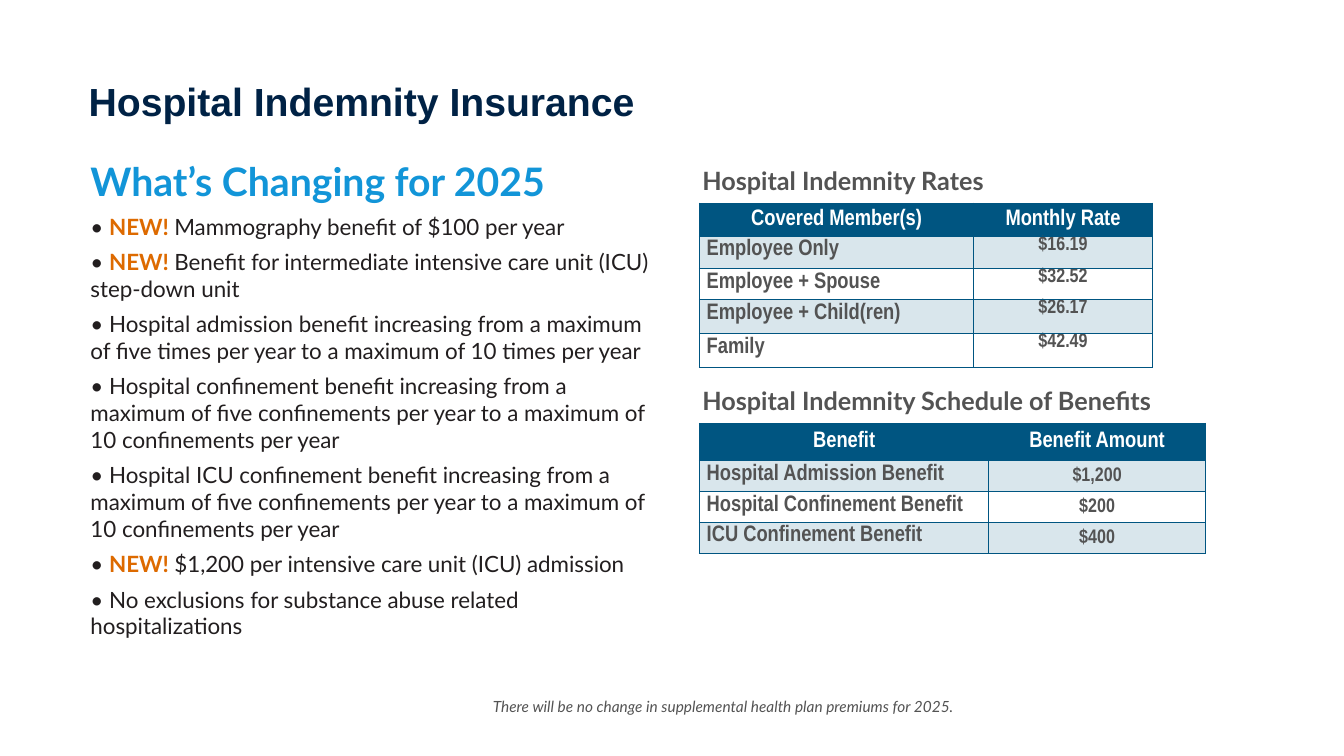
import pptx
import pptx.dml.color
import pptx.enum.text
import pptx.util
from lxml import etree
from pptx.oxml.ns import qn

Cm, Pt = pptx.util.Cm, pptx.util.Pt
Align = pptx.enum.text.PP_ALIGN
Anchor = pptx.enum.text.MSO_ANCHOR
HEX = {"navy": "002245", "blue": "1295D8", "teal": "005581", "pale": "D9E6EC",
       "white": "FFFFFF", "gray": "535353", "ink": "221E1F", "flame": "DD6A00"}

NEWS = [  # (is new, text)
    (True, "Mammography benefit of $100 per year"),
    (True, "Benefit for intermediate intensive care unit (ICU) step-down unit"),
    (False, "Hospital admission benefit increasing from a maximum of five times "
            "per year to a maximum of 10 times per year"),
    (False, "Hospital confinement benefit increasing from a maximum of five "
            "confinements per year to a maximum of 10 confinements per year"),
    (False, "Hospital ICU confinement benefit increasing from a maximum of five "
            "confinements per year to a maximum of 10 confinements per year"),
    (True, "$1,200 per intensive care unit (ICU) admission"),
    (False, "No exclusions for substance abuse related hospitalizations"),
]
RATES = [("Covered Member(s)", "Monthly Rate"), ("Employee Only", "$16.19"),
         ("Employee + Spouse", "$32.52"), ("Employee + Child(ren)", "$26.17"),
         ("Family", "$42.49")]
PLAN = [("Benefit", "Benefit Amount"), ("Hospital Admission Benefit", "$1,200"),
        ("Hospital Confinement Benefit", "$200"), ("ICU Confinement Benefit", "$400")]


def tint(color):
    return pptx.dml.color.RGBColor.from_string(HEX[color])


def style(font, size, color, name="Lato", bold=False, italic=False):
    font.name, font.size = name, Pt(size)
    font.bold, font.italic = bold, italic
    font.color.rgb = tint(color)


def add_box(slide, box):
    frame = slide.shapes.add_textbox(*map(Cm, box)).text_frame
    frame.word_wrap = True
    return frame


def add_line(slide, box, text, size, **look):
    para = add_box(slide, box).paragraphs[0]
    para.text = text
    style(para.font, size, "gray", **look)


def add_title(slide, box):
    title = slide.shapes.title
    title.left, title.top, title.width, title.height = map(Cm, box)
    frame = title.text_frame
    frame.text = "Hospital Indemnity Insurance"
    frame.auto_size = pptx.enum.text.MSO_AUTO_SIZE.NONE
    frame.vertical_anchor = Anchor.MIDDLE
    para = frame.paragraphs[0]
    para.alignment = Align.LEFT
    style(para.font, 28, "navy", "Arial", bold=True)


def add_news(slide, box):
    frame = add_box(slide, box)
    head = frame.paragraphs[0]
    head.text = "What’s Changing for 2025"
    style(head.font, 28, "blue", bold=True)
    for new, text in NEWS:
        para = frame.add_paragraph()
        para.space_before = Pt(6)
        style(para.font, 16, "ink")
        para.add_run().text = "• "
        if new:
            flag = para.add_run()
            flag.text = "NEW! "
            flag.font.bold = True
            flag.font.color.rgb = tint("flame")
        para.add_run().text = text


def add_edges(cell):
    props = cell._tc.get_or_add_tcPr()
    for i, side in enumerate(("lnL", "lnR", "lnT", "lnB")):
        edge = etree.Element(qn("a:" + side), w=str(Pt(1)))
        fill = etree.SubElement(edge, qn("a:solidFill"))
        etree.SubElement(fill, qn("a:srgbClr"), val=HEX["teal"])
        props.insert(i, edge)


def fill_cell(cell, text, row, col, pad, anchor):
    para = cell.text_frame.paragraphs[0]
    para.text = text
    head, label = row == 0, row > 0 and col == 0
    if label:
        para.line_spacing = 1.15
    else:
        para.alignment = Align.CENTER
    style(para.font, 16 if head or label else 14, "white" if head else "gray",
          "Arial Narrow", bold=True)
    side, rim = pad if head else (0.18, 0)
    cell.margin_left = cell.margin_right = Cm(side)
    cell.margin_top = cell.margin_bottom = Cm(rim)
    cell.vertical_anchor = Anchor.MIDDLE if head else Anchor.TOP if label else anchor
    cell.fill.solid()
    cell.fill.fore_color.rgb = tint("teal" if head else "pale" if row % 2 else "white")
    add_edges(cell)


def add_grid(slide, box, name, data, cols, rows, pad, anchor):
    """Heading with its table below."""
    left, top, width = box
    add_line(slide, (left, top, width, 1.02), name, 18, bold=True)
    grid = slide.shapes.add_table(
        len(rows), len(cols), Cm(left + 0.18), Cm(top + 1.08),
        Cm(sum(cols)), Cm(sum(rows))).table
    for col, wide in zip(grid.columns, cols):
        col.width = Cm(wide)
    for row, high in zip(grid.rows, rows):
        row.height = Cm(high)
    for r, texts in enumerate(data):
        for c, text in enumerate(texts):
            fill_cell(grid.cell(r, c), text, r, c, pad, anchor)


def main():
    deck = pptx.Presentation()
    deck.slide_width, deck.slide_height = Cm(33.87), Cm(19.05)
    slide = deck.slides.add_slide(deck.slide_layouts[5])

    # Title and list of changes
    add_title(slide, (1.98, 1.75, 17.3, 1.57))
    add_news(slide, (2.03, 3.84, 14.91, 11.84))

    # Rates and benefits
    add_grid(slide, (17.45, 4.04, 16.4), "Hospital Indemnity Rates", RATES,
             (6.91, 4.5), (0.84, 0.81, 0.74, 0.86, 0.86), (0.03, 0.02), Anchor.TOP)
    add_grid(slide, (17.45, 9.59, 12.93), "Hospital Indemnity Schedule of Benefits",
             PLAN, (7.29, 5.46), (0.81, 0.66, 0.64, 0.69), (0.25, 0.13), Anchor.MIDDLE)

    # Footnote
    add_line(slide, (12.17, 17.45, 13.26, 0.74),
             "There will be no change in supplemental health plan premiums for 2025.",
             11, italic=True)
    deck.save("out.pptx")


if __name__ == "__main__":
    main()
